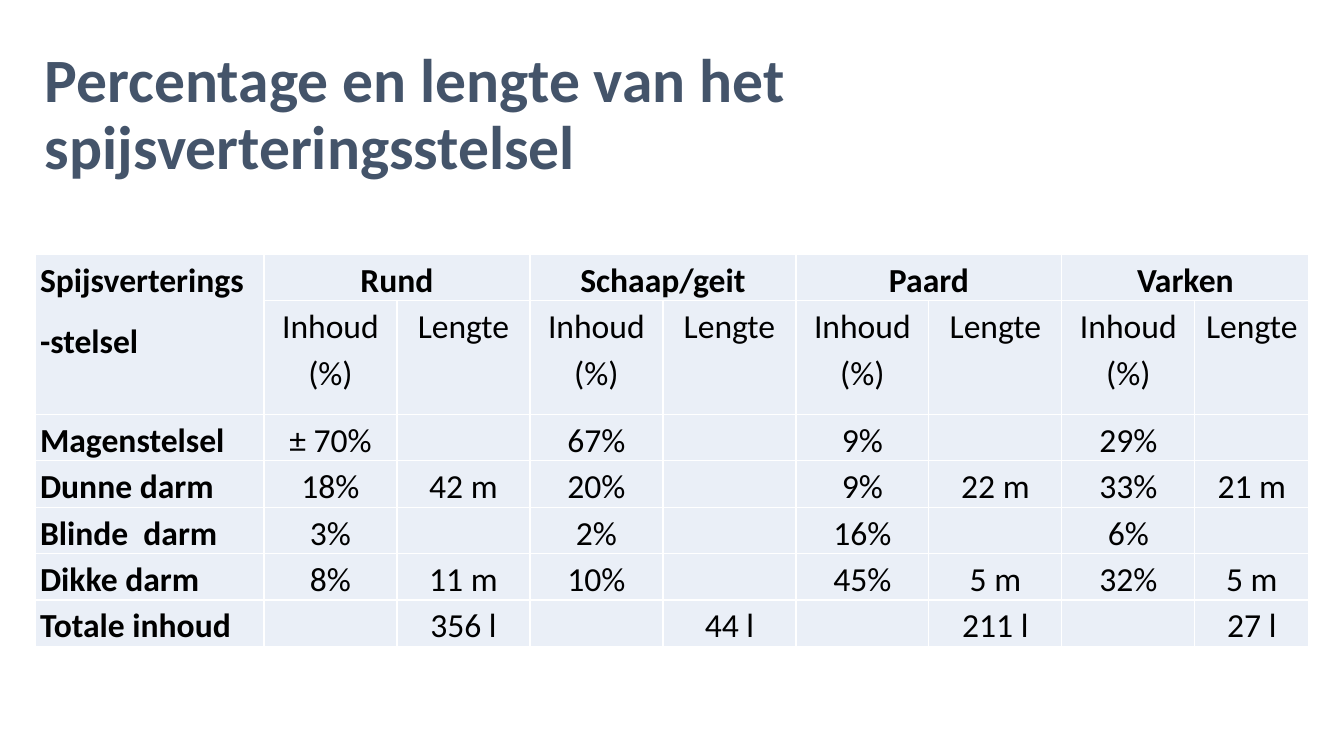
import lxml.etree
import pptx
import pptx.dml.color
import pptx.enum.text
import pptx.oxml.ns
import pptx.util

PX = 914400 / 100.8
FONT = "Calibri"
COLORS = {"title": "44546A", "text": "000000", "cell": "EAEFF7", "border": "FFFFFF"}

TITLE = "Percentage en lengte van het spijsverteringsstelsel"
ORGAN_HEADER = "Spijsverterings\n-stelsel"
ANIMALS = ["Rund", "Schaap/geit", "Paard", "Varken"]
MEASURES = ["Inhoud (%)", "Lengte"]
ORGANS = [
    ["Magenstelsel", "± 70%", "", "67%", "", "9%", "", "29%", ""],
    ["Dunne darm", "18%", "42 m", "20%", "", "9%", "22 m", "33%", "21 m"],
    ["Blinde  darm", "3%", "", "2%", "", "16%", "", "6%", ""],
    ["Dikke darm", "8%", "11 m", "10%", "", "45%", "5 m", "32%", "5 m"],
    ["Totale inhoud", "", "356 l", "", "44 l", "", "211 l", "", "27 l"],
]
COLUMN_WIDTHS = [229] + [133] * 7 + [114]
ROW_HEIGHTS = [46, 114] + [46] * len(ORGANS)


def px(length):
    return pptx.util.Emu(round(length * PX))


def rgb(name):
    return pptx.dml.color.RGBColor.from_string(COLORS[name])


def format_paragraph(para, size, color, bold, spacing, after=0, centred=False):
    align = pptx.enum.text.PP_ALIGN
    para.alignment = align.CENTER if centred else align.LEFT
    para.line_spacing = spacing
    para.space_after = pptx.util.Pt(after)
    for span in para.runs:
        span.font.name = FONT
        span.font.size = pptx.util.Pt(size)
        span.font.bold = bold
        span.font.color.rgb = rgb(color)


def style_cell(cell):
    """Give the cell thin borders on all sides and a plain fill."""
    properties = cell._tc.get_or_add_tcPr()
    qn = pptx.oxml.ns.qn
    for side in ("lnL", "lnR", "lnT", "lnB"):
        line = lxml.etree.SubElement(properties, qn(f"a:{side}"), w=str(pptx.util.Pt(1)))
        fill = lxml.etree.SubElement(line, qn("a:solidFill"))
        lxml.etree.SubElement(fill, qn("a:srgbClr"), val=COLORS["border"])
    cell.fill.solid()
    cell.fill.fore_color.rgb = rgb("cell")


def write_cell(cell, text, bold, centred):
    cell.margin_left = cell.margin_right = pptx.util.Inches(0.05)
    cell.margin_top = cell.margin_bottom = 0
    cell.text_frame.text = text
    for para in cell.text_frame.paragraphs:
        format_paragraph(para, 24, "text", bold, 1.15, 10, centred)


def add_title(page, box):
    frame = page.shapes.add_textbox(*map(px, box)).text_frame
    frame.word_wrap = True
    frame.vertical_anchor = pptx.enum.text.MSO_ANCHOR.MIDDLE
    frame.text = TITLE
    format_paragraph(frame.paragraphs[0], 44, "title", True, 0.9)


def add_organ_table(page, box):
    size = len(ROW_HEIGHTS), len(COLUMN_WIDTHS)
    table = page.shapes.add_table(*size, *map(px, box)).table
    table.first_row = table.horz_banding = False
    for column, width in zip(table.columns, COLUMN_WIDTHS):
        column.width = px(width)
    for row, height in zip(table.rows, ROW_HEIGHTS):
        row.height = px(height)
    for cell in table.iter_cells():
        style_cell(cell)

    table.cell(0, 0).merge(table.cell(1, 0))
    write_cell(table.cell(0, 0), ORGAN_HEADER, True, False)
    for index, animal in enumerate(ANIMALS):
        left = 1 + index * len(MEASURES)
        header = table.cell(0, left)
        header.merge(table.cell(0, left + len(MEASURES) - 1))
        write_cell(header, animal, True, True)
        header.vertical_anchor = pptx.enum.text.MSO_ANCHOR.MIDDLE
        for offset, measure in enumerate(MEASURES):
            write_cell(table.cell(1, left + offset), measure, False, True)

    for row, values in enumerate(ORGANS, start=2):
        for column, value in enumerate(values):
            if value:
                write_cell(table.cell(row, column), value, column == 0, column > 0)


def main():
    deck = pptx.Presentation()
    deck.slide_width, deck.slide_height = px(1344), px(756)
    page = deck.slides.add_slide(deck.slide_layouts[6])
    add_title(page, (35, 40, 1274, 152))
    add_organ_table(page, (35, 254, sum(COLUMN_WIDTHS), sum(ROW_HEIGHTS)))
    deck.save("out.pptx")


if __name__ == "__main__":
    main()
